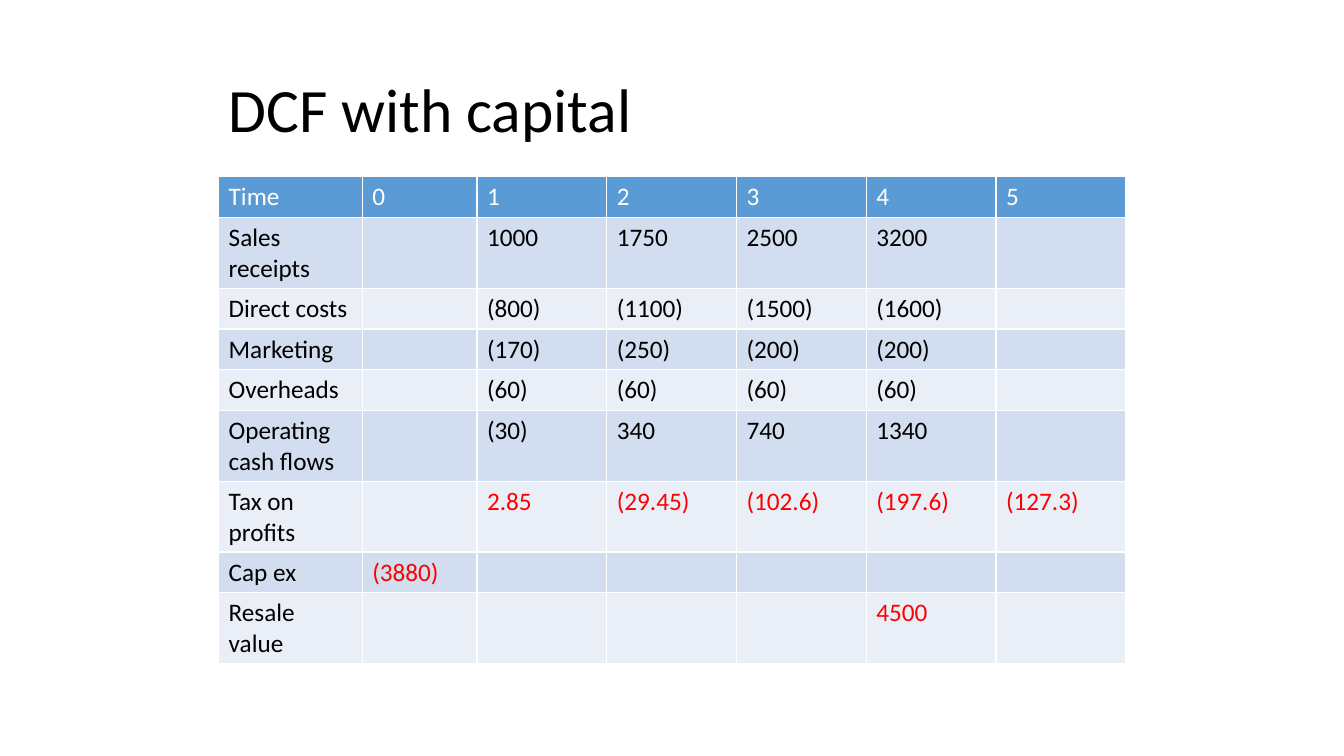
from pptx import Presentation
from pptx.dml.color import RGBColor
from pptx.enum.text import MSO_ANCHOR
from pptx.util import Cm, Pt

FONT = "Calibri"
BLACK, WHITE, RED = "000000", "FFFFFF", "FF0000"
HEADER_FILL = "5B9BD5"
BAND_FILLS = ["EAEFF7", "D2DEEF"]

LEFT, WIDTH = 5.51, 22.86
COLUMN_WIDTHS = [3.62, 2.89] + [3.27] * 5
LINE_HEIGHT, TWO_LINE_HEIGHT = 1.03, 1.78

CASH_FLOWS = [
    ["Time", "0", "1", "2", "3", "4", "5"],
    ["Sales receipts", "", "1000", "1750", "2500", "3200", ""],
    ["Direct costs", "", "(800)", "(1100)", "(1500)", "(1600)", ""],
    ["Marketing", "", "(170)", "(250)", "(200)", "(200)", ""],
    ["Overheads", "", "(60)", "(60)", "(60)", "(60)", ""],
    ["Operating cash flows", "", "(30)", "340", "740", "1340", ""],
    ["Tax on profits", "", "2.85", "(29.45)", "(102.6)", "(197.6)", "(127.3)"],
    ["Cap ex", "(3880)", "", "", "", "", ""],
    ["Resale value", "", "", "", "", "4500", ""],
]
TWO_LINE_ROWS = {"Sales receipts", "Operating cash flows", "Tax on profits", "Resale value"}
RED_ROWS = {"Tax on profits", "Cap ex", "Resale value"}


def color(value):
    return RGBColor.from_string(value)


def write_text(frame, text, size=18, ink=BLACK, line_spacing=None):
    para = frame.paragraphs[0]
    if line_spacing:
        para.line_spacing = line_spacing
    span = para.add_run()
    span.text = text
    span.font.name = FONT
    span.font.size = Pt(size)
    span.font.bold = False
    span.font.color.rgb = color(ink)


def add_title(page, text):
    box = page.shapes.add_textbox(Cm(LEFT), Cm(1.73), Cm(WIDTH), Cm(2.21))
    box.text_frame.word_wrap = True
    box.text_frame.vertical_anchor = MSO_ANCHOR.MIDDLE
    write_text(box.text_frame, text, size=44, line_spacing=0.9)


def text_color(row_number, column_number, label):
    if row_number == 0:
        return WHITE
    return RED if column_number > 0 and label in RED_ROWS else BLACK


def add_cash_flow_table(page, rows):
    """Add the table; its default style supplies the white cell borders."""
    heights = [TWO_LINE_HEIGHT if row[0] in TWO_LINE_ROWS else LINE_HEIGHT for row in rows]
    table = page.shapes.add_table(
        len(rows), len(COLUMN_WIDTHS), Cm(LEFT), Cm(4.45), Cm(WIDTH), Cm(sum(heights))
    ).table
    for column, width in zip(table.columns, COLUMN_WIDTHS):
        column.width = Cm(width)
    for row_number, (values, height) in enumerate(zip(rows, heights)):
        table.rows[row_number].height = Cm(height)
        fill = BAND_FILLS[row_number % 2] if row_number else HEADER_FILL
        for column_number, value in enumerate(values):
            cell = table.cell(row_number, column_number)
            cell.fill.solid()
            cell.fill.fore_color.rgb = color(fill)
            if value:
                ink = text_color(row_number, column_number, values[0])
                write_text(cell.text_frame, value, ink=ink)


def main():
    deck = Presentation()
    deck.slide_width, deck.slide_height = Cm(33.87), Cm(19.05)
    page = deck.slides.add_slide(deck.slide_layouts[6])
    add_title(page, "DCF with capital")
    add_cash_flow_table(page, CASH_FLOWS)
    deck.save("out.pptx")


if __name__ == "__main__":
    main()
